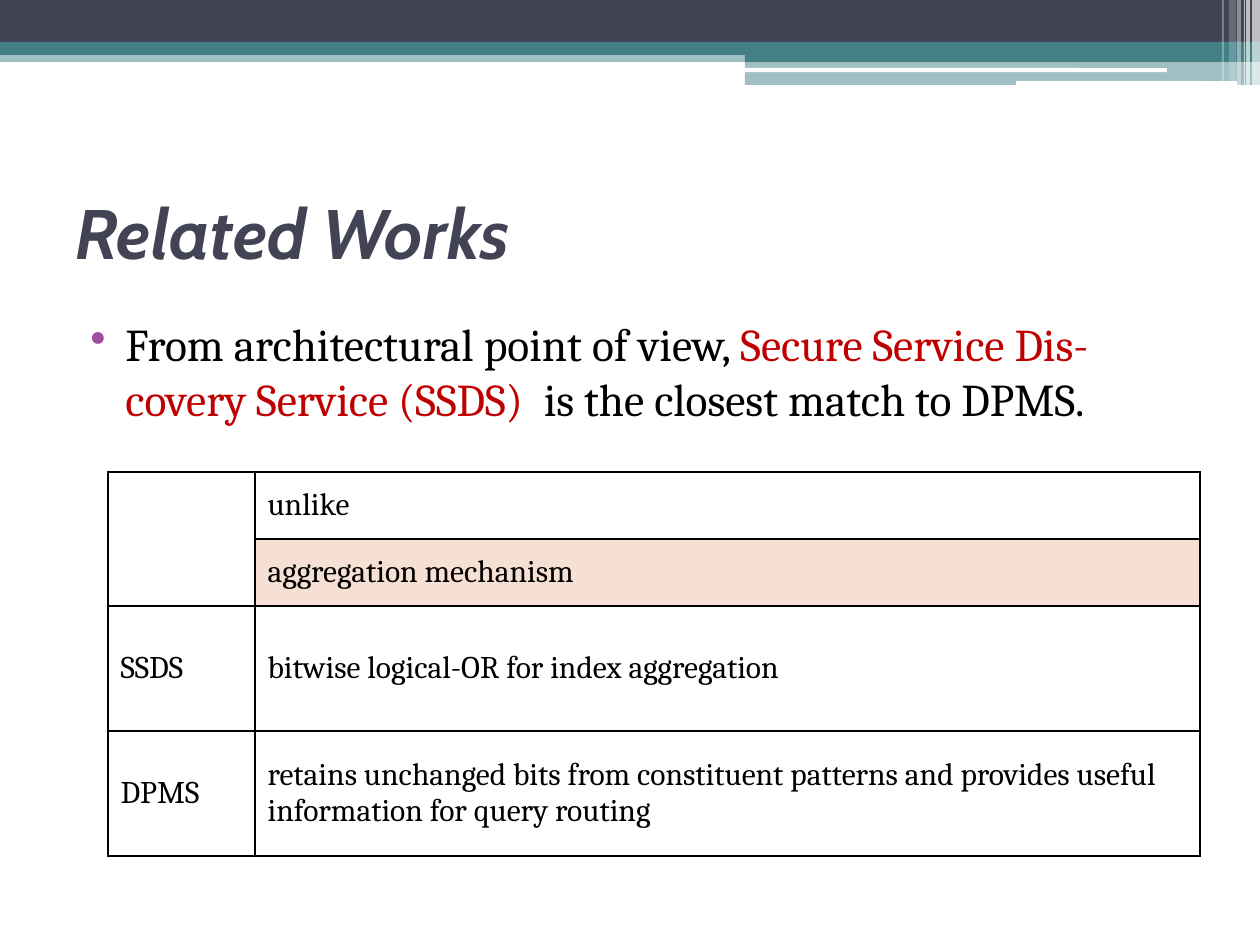
"""Build the Related Works slide with its header band and comparison table."""
from lxml import etree
from pptx import Presentation, util as u
from pptx.dml.color import RGBColor
from pptx.enum import shapes, text
from pptx.oxml import ns

SCALE = 914400 / 126
NAVY = RGBColor(0x42, 0x44, 0x56)
TEAL = RGBColor(0x43, 0x80, 0x86)
WHITE = RGBColor(0xFF, 0xFF, 0xFF)
BLACK = RGBColor(0, 0, 0)
RED = RGBColor(0xC0, 0, 0)
PEACH = RGBColor(0xF5, 0xE0, 0xD3)
PLUM = RGBColor(0xA0, 0x4D, 0xA3)

RECT = shapes.MSO_SHAPE.RECTANGLE
ROUND = shapes.MSO_SHAPE.ROUNDED_RECTANGLE
MIDDLE = text.MSO_ANCHOR.MIDDLE

BANDS = [
    (RECT, (0, 50, 1260, 12), TEAL, 50),
    (RECT, (0, 0, 1260, 42), NAVY, 100),
    (RECT, (0, 42, 1260, 13), TEAL, 100),
    (RECT, (745, 49, 515, 13), TEAL, 100),
    (RECT, (745, 61, 515, 24), TEAL, 50),
    (ROUND, (745, 68, 422, 4), WHITE, 100),
    (ROUND, (1016, 81, 221, 5), WHITE, 100),
]
STRIPES = [
    (1252, 8, 86, 65),
    (1246, 4, 86, 65),
    (1244, 1, 86, 60),
    (1237, 4, 86, 40),
    (1229, 7, 81, 20),
    (1222, 2, 81, 30),
]
HEAD = {"size": u.Pt(40), "name": "Cabin", "bold": True, "italic": True}
BODY = {"size": u.Pt(26), "name": "Cambria"}
CELL = {"size": u.Pt(18), "name": "Cambria"}
POINT = [
    ("From architectural point of view, ", BLACK),
    ("Secure Service Dis-covery Service (SSDS)", RED),
    ("  is the closest match to DPMS.", BLACK),
]
ROWS = [
    ("", "unlike"),
    ("", "aggregation mechanism"),
    ("SSDS", "bitwise logical-OR for index aggregation"),
    ("DPMS", "retains unchanged bits from constituent patterns "
             "and provides useful information for query routing"),
]
WIDTHS = (147, 945)
HEIGHTS = (67, 67, 125, 125)


def px(*vals):
    """Turn pixel lengths into EMU."""
    return [u.Emu(round(v * SCALE)) for v in vals]


def sub(node, tag, **attrs):
    """Append a drawing element to a node."""
    return etree.SubElement(node, ns.qn(tag), attrs)


def add_band(slide, kind, box, color, alpha):
    """Draw one plain bar with the given opacity in percent."""
    bar = slide.shapes.add_shape(kind, *px(*box))
    bar.shadow.inherit = False
    bar.line.fill.background()
    bar.fill.solid()
    bar.fill.fore_color.rgb = color
    if alpha < 100:
        tint = bar.fill._xPr.find(".//" + ns.qn("a:srgbClr"))
        sub(tint, "a:alpha", val=str(alpha * 1000))


def add_run(para, words, color, form):
    """Add a run of text in a given format."""
    run = para.add_run()
    run.text = words
    for key, val in form.items():
        setattr(run.font, key, val)
    run.font.color.rgb = color


def add_text(slide, box, runs, form, anchor):
    """Add a text box and return its paragraph."""
    frame = slide.shapes.add_textbox(*px(*box)).text_frame
    frame.word_wrap = True
    frame.vertical_anchor = anchor
    para = frame.paragraphs[0]
    for words, color in runs:
        add_run(para, words, color, form)
    return para


def add_bullet(para):
    """Give a paragraph a hanging coloured bullet."""
    para.space_before = u.Pt(3)
    props = para._p.get_or_add_pPr()
    left, hang = px(50, 35)
    props.set("marL", str(left))
    props.set("indent", str(-hang))
    sub(sub(props, "a:buClr"), "a:srgbClr", val=str(PLUM))
    sub(props, "a:buChar", char="•")


def add_edges(cell):
    """Draw a thin black border around a cell."""
    props = cell._tc.get_or_add_tcPr()
    for side in "LRTB":
        edge = sub(props, f"a:ln{side}", w=str(u.Pt(1)))
        sub(sub(edge, "a:solidFill"), "a:srgbClr", val=str(BLACK))


def add_grid(slide, left, top):
    """Add the comparison table."""
    size = px(left, top, sum(WIDTHS), sum(HEIGHTS))
    grid = slide.shapes.add_table(len(ROWS), len(WIDTHS), *size).table
    grid.first_row = grid.horz_banding = False
    for col, wide in zip(grid.columns, px(*WIDTHS)):
        col.width = wide
    for row, high in zip(grid.rows, px(*HEIGHTS)):
        row.height = high
    for r, row in enumerate(ROWS):
        for c, words in enumerate(row):
            cell = grid.cell(r, c)
            add_edges(cell)
            cell.fill.solid()
            cell.fill.fore_color.rgb = PEACH if (r, c) == (1, 1) else WHITE
            cell.vertical_anchor = MIDDLE
            if words:
                add_run(cell.text_frame.paragraphs[0], words, BLACK, CELL)
    grid.cell(0, 0).merge(grid.cell(1, 0))


def main():
    """Build and save the slide."""
    deck = Presentation()
    deck.slide_width, deck.slide_height = px(1260, 945)
    slide = deck.slides.add_slide(deck.slide_layouts[6])
    for band in BANDS:
        add_band(slide, *band)
    for left, wide, high, alpha in STRIPES:
        add_band(slide, RECT, (left, 0, wide, high), WHITE, alpha)
    add_text(slide, (63, 158, 1134, 147), [("Related Works", NAVY)], HEAD, MIDDLE)
    para = add_text(slide, (63, 310, 1134, 596), POINT, BODY, text.MSO_ANCHOR.TOP)
    add_bullet(para)
    add_grid(slide, 108, 472)
    deck.save("out.pptx")


if __name__ == "__main__":
    main()
